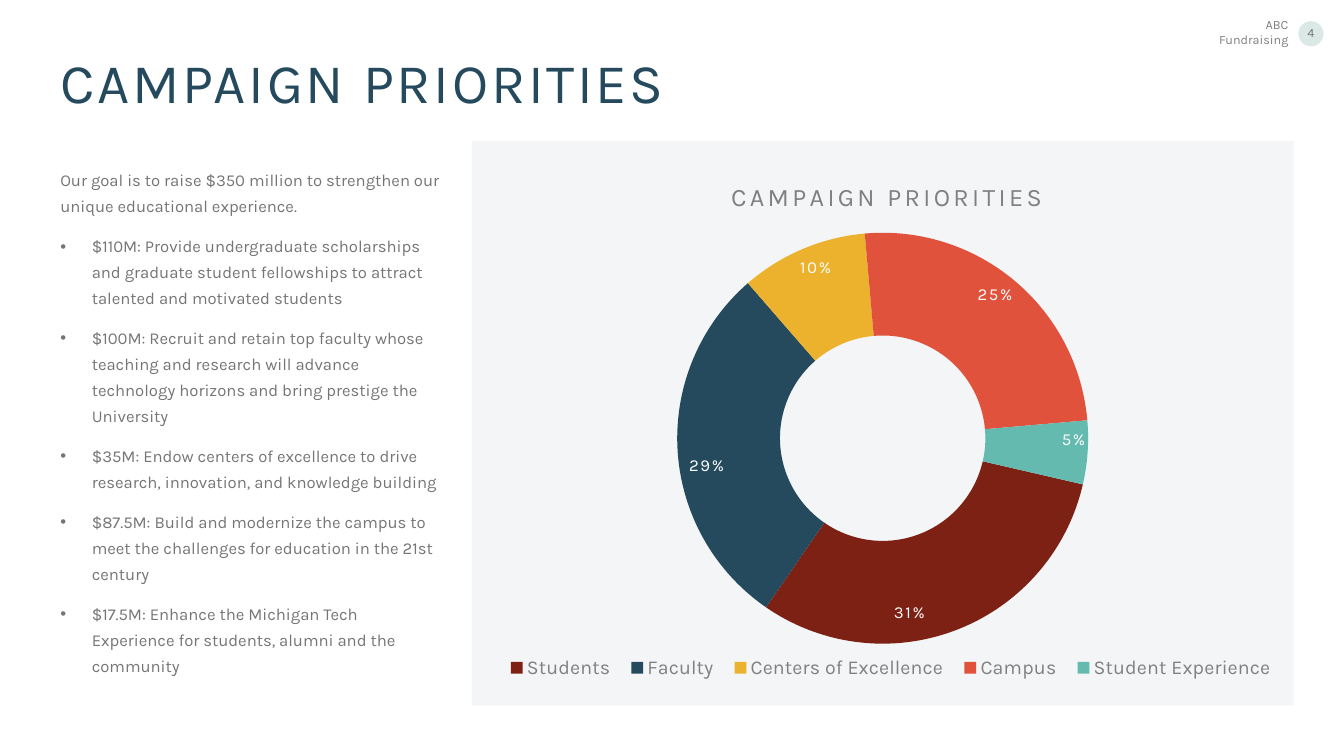
from dataclasses import dataclass

from lxml.etree import SubElement as Sub
from pptx import Presentation
from pptx.chart.data import CategoryChartData as Data
from pptx.dml.color import RGBColor as Color
from pptx.enum.chart import XL_CHART_TYPE as Kind, XL_LEGEND_POSITION as Spot
from pptx.enum.shapes import MSO_SHAPE as Form
from pptx.enum.text import MSO_ANCHOR as Anchor, PP_ALIGN as Align
from pptx.oxml import parse_xml
from pptx.oxml.ns import nsdecls, qn
from pptx.util import Pt


@dataclass
class Theme:
    font: str = "Karla"
    base: str = "Calibri"
    white: str = "FFFFFF"
    navy: str = "254A5D"
    gray: str = "757575"
    pale: str = "808080"
    mint: str = "DBE9E6"
    panel: str = "D9E1E2"
    head: float = 40
    title: float = 18
    key: float = 14
    label: float = 12
    body: float = 11.9
    tick: float = 10
    small: float = 9


def style(font, size, color, name):
    font.size = Pt(size)
    font.name = name
    font.bold = False
    font.color.rgb = Color.from_string(color)


def write(para, text, size, color, name, track=0, align=None, line=None, gap=0, bullet=False):
    if bullet:
        props = para._p.get_or_add_pPr()
        props.set("marL", str(Pt(22.5)))
        props.set("indent", str(-Pt(22.5)))
        Sub(props, qn("a:buFont")).set("typeface", "Arial")
        Sub(props, qn("a:buChar")).set("char", "•")
    para.alignment = align
    if line:
        para.line_spacing = line
    if gap:
        para.space_before = Pt(gap)
    para.text = text
    for run in para.runs:
        style(run.font, size, color, name)
        if track:
            run._r.get_or_add_rPr().set("spc", str(round(track * 100)))


def place(node, x, y, wide=None, high=None, inner=False):
    for old in node.findall(qn("c:layout")):
        node.remove(old)
    spots = [("x", x), ("y", y), ("w", wide), ("h", high)]
    parts = '<c:layoutTarget val="inner"/>' if inner else ""
    parts += '<c:xMode val="edge"/><c:yMode val="edge"/>'
    parts += "".join(f'<c:{tag} val="{val}"/>' for tag, val in spots if val is not None)
    return parse_xml(f'<c:layout {nsdecls("c")}><c:manualLayout>{parts}</c:manualLayout></c:layout>')


class Deck:
    def __init__(self, theme):
        self.theme = theme
        self.show = Presentation()
        self.show.slide_width, self.show.slide_height = Pt(960), Pt(540)
        self.slide = self.show.slides.add_slide(self.show.slide_layouts[6])
        fill = self.slide.background.fill
        fill.solid()
        fill.fore_color.rgb = Color.from_string(theme.white)

    def shape(self, form, box, color, alpha=100):
        item = self.slide.shapes.add_shape(form, *map(Pt, box))
        item.shadow.inherit = False
        item.fill.solid()
        item.fill.fore_color.rgb = Color.from_string(color)
        item.line.fill.background()
        if alpha < 100:
            tint = item._element.spPr.find(qn("a:solidFill"))[0]
            Sub(tint, qn("a:alpha")).set("val", str(alpha * 1000))

    def text(self, box, lines, size, color, anchor=Anchor.TOP, gap=0, dots=False, **form):
        frame = self.slide.shapes.add_textbox(*map(Pt, box)).text_frame
        frame.word_wrap = True
        frame.vertical_anchor = anchor
        for i, line in enumerate(lines):
            para = frame.add_paragraph() if i else frame.paragraphs[0]
            write(para, line, size, color, self.theme.font,
                  gap=gap if i else 0, bullet=dots and i > 0, **form)

    def ring(self, box, title, parts):
        look = self.theme
        data = Data()
        data.categories = [name for name, _, _ in parts]
        data.add_series("Series 1", [val for _, val, _ in parts])
        chart = self.slide.shapes.add_chart(Kind.DOUGHNUT, *map(Pt, box), data).chart
        style(chart.font, look.tick, look.navy, look.base)

        chart.has_title = True
        write(chart.chart_title.text_frame.paragraphs[0], title, look.title, look.pale, look.font, track=2.4)
        chart.chart_title.include_in_layout = False
        head = chart.chart_title._element
        head.find(qn("c:tx")).addnext(place(head, 0.31, 0.04))

        chart.has_legend = True
        chart.legend.position = Spot.BOTTOM
        chart.legend.include_in_layout = False
        style(chart.legend.font, look.key, look.pale, look.font)
        key = chart.legend._element
        key.find(qn("c:legendPos")).addnext(place(key, 0.03, 0.91, 0.96, 0.06))

        plot = chart.plots[0]
        plot.vary_by_categories = True
        area = plot._element.getparent()
        area.insert(0, place(area, 0.25, 0.14, 0.5, 0.76, inner=True))
        for tag, val in (("c:firstSliceAng", "103"), ("c:holeSize", "68")):
            node = plot._element.find(qn(tag))
            if node is None:
                node = Sub(plot._element, qn(tag))
            node.set("val", val)
        for i, (_, _, color) in enumerate(parts):
            point = plot.series[0].points[i].format
            point.fill.solid()
            point.fill.fore_color.rgb = Color.from_string(color)
            point.line.fill.background()


def main():
    look = Theme()
    deck = Deck(look)
    deck.shape(Form.OVAL, (927.4, 15.1, 18, 18), look.mint)
    deck.text((843, 13, 84.4, 20), ["ABC\vFundraising"], look.small, look.pale,
              anchor=Anchor.MIDDLE, align=Align.RIGHT)
    deck.text((922.3, 14.4, 28, 18), ["4"], look.small, look.gray, align=Align.CENTER)
    deck.shape(Form.RECTANGLE, (337, 100.8, 587, 403), look.panel, alpha=30)

    title = "CAMPAIGN PRIORITIES"
    deck.text((36, 36, 886, 40), [title], look.head, look.navy, track=2, line=0.9)
    goals = [
        "Our goal is to raise $350 million to strengthen our unique educational experience.",
        "$110M: Provide undergraduate scholarships and graduate student fellowships "
        "to attract talented and motivated students",
        "$100M: Recruit and retain top faculty whose teaching and research will advance "
        "technology horizons and bring prestige the University",
        "$35M: Endow centers of excellence to drive research, innovation, and knowledge building",
        "$87.5M: Build and modernize the campus to meet the challenges for education "
        "in the 21st century",
        "$17.5M: Enhance the Michigan Tech Experience for students, alumni and the community",
    ]
    deck.text((36, 113.8, 288, 390), goals, look.body, look.gray, line=1.3, gap=10, dots=True)

    parts = [
        ("Students", 31, "7C2113"),
        ("Faculty", 29, look.navy),
        ("Centers of Excellence", 10, "ECB22D"),
        ("Campus", 25, "E1523D"),
        ("Student Experience", 5, "65BAAF"),
    ]
    deck.ring((337, 110.2, 587, 390.2), title, parts)
    spots = [(628.6, 419), (483.8, 313.9), (561.6, 172.8), (689.8, 192.2), (745.9, 295.2)]
    for (_, val, _), (x, y) in zip(parts, spots):
        deck.text((x, y, 41.8, 27.4), [f"{val}%"], look.label, look.white,
                  track=1.2, align=Align.CENTER, line=1.5)
    deck.show.save("out.pptx")


if __name__ == "__main__":
    main()
